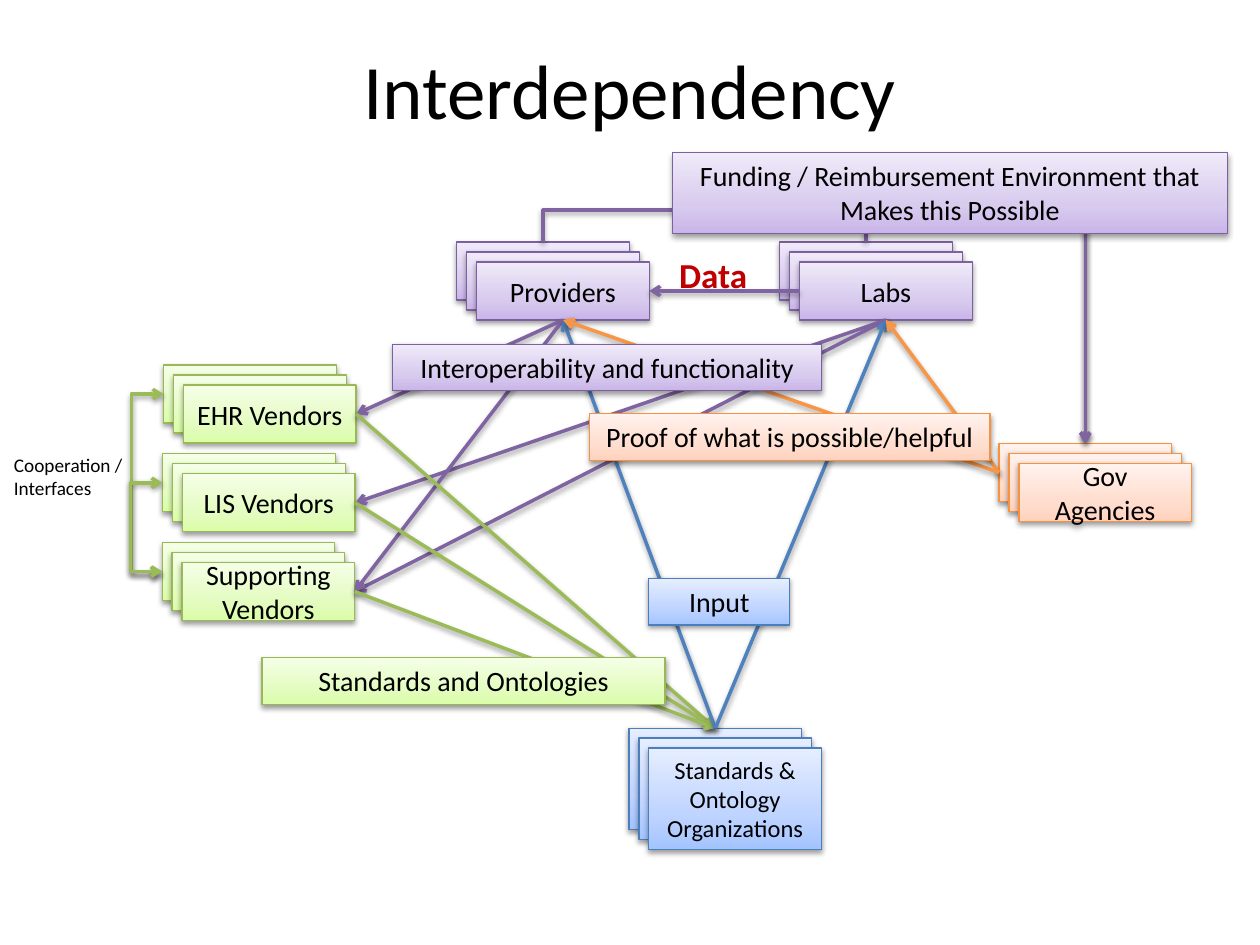
from copy import deepcopy
from dataclasses import dataclass

from lxml.etree import SubElement
from pptx import Presentation
from pptx.dml.color import RGBColor
from pptx.enum.shapes import MSO_CONNECTOR as Connector, MSO_SHAPE as Preset
from pptx.enum.text import MSO_ANCHOR as Anchor, MSO_AUTO_SIZE as AutoSize, PP_ALIGN as Align
from pptx.oxml.ns import qn
from pptx.util import Cm, Pt

BLACK = RGBColor(0x00, 0x00, 0x00)
DARK_RED = RGBColor(0xC0, 0x00, 0x00)
FONT = "Calibri"
TOP, LEFT, BOTTOM, RIGHT = range(4)
STACK_STEP = 0.2
STOP_POSITIONS = (0, 0.35, 1)


@dataclass(frozen=True)
class Palette:
    stops: tuple[RGBColor, RGBColor, RGBColor]
    outline: RGBColor
    arrow: RGBColor


PURPLE = Palette((RGBColor(0xC9, 0xB5, 0xE8), RGBColor(0xD8, 0xCB, 0xEE), RGBColor(0xF0, 0xEA, 0xF9)),
                 RGBColor(0x7D, 0x60, 0xA0), RGBColor(0x80, 0x64, 0xA2))
GREEN = Palette((RGBColor(0xDA, 0xFD, 0xA7), RGBColor(0xE4, 0xFC, 0xC2), RGBColor(0xF5, 0xFF, 0xE7)),
                RGBColor(0x98, 0xB9, 0x55), RGBColor(0x9B, 0xBB, 0x59))
BLUE = Palette((RGBColor(0xA4, 0xC4, 0xFF), RGBColor(0xBF, 0xD4, 0xFF), RGBColor(0xE6, 0xEE, 0xFF)),
               RGBColor(0x4B, 0x7E, 0xBC), RGBColor(0x4F, 0x81, 0xBD))
ORANGE = Palette((RGBColor(0xFF, 0xD2, 0xBD), RGBColor(0xFF, 0xDE, 0xD0), RGBColor(0xFF, 0xF2, 0xED)),
                 RGBColor(0xF6, 0x92, 0x40), RGBColor(0xF7, 0x96, 0x46))


@dataclass(frozen=True)
class Box:
    text: str
    left: float
    top: float
    palette: Palette
    width: float = 3.48
    height: float = 1.17
    size: float = 16


@dataclass(frozen=True)
class Stack:
    back: object
    front: object


LABS = Box("Labs", 15.72, 4.88, PURPLE)
PROVIDERS = Box("Providers", 9.21, 4.88, PURPLE)
EHR = Box("EHR Vendors", 3.3, 7.36, GREEN)
LIS = Box("LIS Vendors", 3.28, 9.15, GREEN)
SUPPORTING = Box("Supporting Vendors", 3.27, 10.94, GREEN)
ORGANIZATIONS = Box("Standards & Ontology Organizations", 12.68, 14.68, BLUE, height=2.04, size=14)
AGENCIES = Box("Gov Agencies", 20.14, 8.94, ORANGE)
GROUPS = (LABS, PROVIDERS, EHR, LIS, SUPPORTING, ORGANIZATIONS, AGENCIES)

ONTOLOGIES = Box("Standards and Ontologies", 5.28, 13.26, GREEN, 8.13, 0.94)
INPUT = Box("Input", 13.08, 11.66, BLUE, 2.84, 0.94)
INTEROPERABILITY = Box("Interoperability and functionality", 7.92, 6.94, PURPLE, 8.64, 0.94)
PROOF = Box("Proof of what is possible/helpful", 11.88, 8.34, ORANGE, 8.08, 0.94)
FUNDING = Box("Funding / Reimbursement Environment that Makes this Possible", 13.56, 3.08, PURPLE, 11.18, 1.63)


def write_text(frame, text: str, *, size: float, color: RGBColor = BLACK, bold: bool = False,
               align: Align = Align.LEFT, anchor: Anchor = Anchor.TOP, grow: bool = False) -> None:
    frame.word_wrap = True
    frame.vertical_anchor = anchor
    frame.auto_size = AutoSize.SHAPE_TO_FIT_TEXT if grow else AutoSize.NONE
    frame.text = text
    for paragraph in frame.paragraphs:
        paragraph.alignment = align
        font = paragraph.runs[0].font
        font.name, font.size, font.bold = FONT, Pt(size), bold
        font.color.rgb = color


def add_shadow(properties) -> None:
    effects = properties.find(qn("a:effectLst"))
    if effects is None:
        effects = SubElement(properties, qn("a:effectLst"))
    shadow = SubElement(effects, qn("a:outerShdw"), blurRad="40000", dist="20000",
                        dir="5400000", rotWithShape="0")
    color = SubElement(shadow, qn("a:srgbClr"), val=str(BLACK))
    SubElement(color, qn("a:alpha"), val="38000")


def add_panel(slide, box: Box, offset: float = 0):
    shape = slide.shapes.add_shape(Preset.RECTANGLE, Cm(box.left + offset), Cm(box.top + offset),
                                   Cm(box.width), Cm(box.height))
    properties = shape._element.spPr
    shape.fill.gradient()
    shape.fill.gradient_angle = 90
    stop_list = properties.find(".//" + qn("a:gsLst"))
    stop_list.append(deepcopy(stop_list[0]))
    for stop, position, color in zip(shape.fill.gradient_stops, STOP_POSITIONS, box.palette.stops):
        stop.position = position
        stop.color.rgb = color
    shape.line.color.rgb = box.palette.outline
    shape.line.width = Pt(0.75)
    shape.shadow.inherit = False
    add_shadow(properties)
    return shape


def add_stack(slide, box: Box) -> Stack:
    back, _, front = [add_panel(slide, box, STACK_STEP * layer) for layer in range(3)]
    write_text(front.text_frame, box.text, size=box.size, align=Align.CENTER, anchor=Anchor.MIDDLE)
    return Stack(back, front)


def add_label(slide, box: Box) -> None:
    shape = add_panel(slide, box)
    write_text(shape.text_frame, box.text, size=box.size, align=Align.CENTER, grow=True)


def add_note(slide, text: str, left: float, top: float, width: float, height: float, **text_format) -> None:
    note = slide.shapes.add_textbox(Cm(left), Cm(top), Cm(width), Cm(height))
    write_text(note.text_frame, text, grow=True, **text_format)


def add_arrow(slide, start, start_side: int, end, end_side: int, palette: Palette,
              kind: Connector = Connector.STRAIGHT, both_ends: bool = False):
    arrow = slide.shapes.add_connector(kind, 0, 0, 0, 0)
    arrow.begin_connect(start, start_side)
    arrow.end_connect(end, end_side)
    arrow.line.color.rgb = palette.arrow
    arrow.line.width = Pt(2)
    line = arrow._element.spPr.find(qn("a:ln"))
    if both_ends:
        SubElement(line, qn("a:headEnd"), type="arrow")
    SubElement(line, qn("a:tailEnd"), type="arrow")
    add_shadow(arrow._element.spPr)
    return arrow


def add_elbow(slide, start, end, side: int, detour: float, palette: Palette, both_ends: bool = False) -> None:
    elbow = add_arrow(slide, start, side, end, side, palette, Connector.ELBOW, both_ends)
    properties = elbow._element.spPr
    if side == TOP:
        center_x, center_y = elbow.left + elbow.width // 2, elbow.top + elbow.height // 2
        elbow.width, elbow.height = elbow.height, elbow.width
        elbow.left, elbow.top = center_x - elbow.width // 2, center_y - elbow.height // 2
        transform = properties.find(qn("a:xfrm"))
        transform.set("rot", "16200000")
        transform.set("flipH", "1")
        detour = -detour
    ratio = round(Cm(detour) / elbow.width * 100000)
    guides = properties.find(qn("a:prstGeom")).find(qn("a:avLst"))
    SubElement(guides, qn("a:gd"), name="adj1", fmla=f"val {ratio}")


def main() -> None:
    presentation = Presentation()
    presentation.slide_width, presentation.slide_height = Cm(25.4), Cm(19.05)
    slide = presentation.slides.add_slide(presentation.slide_layouts[5])
    title = slide.shapes.title
    title.left, title.top, title.width, title.height = Cm(1.27), Cm(0.2), Cm(22.86), Cm(3.18)
    write_text(title.text_frame, "Interdependency", size=44, align=Align.CENTER, anchor=Anchor.MIDDLE)

    labs, providers, ehr, lis, supporting, organizations, agencies = [add_stack(slide, box) for box in GROUPS]

    add_note(slide, "Data", 13.44, 4.98, 1.98, 1.12, size=20, color=DARK_RED, bold=True)
    add_arrow(slide, labs.front, LEFT, providers.front, RIGHT, PURPLE)
    for source, vendor in ((labs, lis), (labs, supporting), (providers, ehr), (providers, supporting)):
        add_arrow(slide, source.front, BOTTOM, vendor.front, RIGHT, PURPLE)

    for vendor in (ehr, lis):
        add_elbow(slide, vendor.back, supporting.back, LEFT, 0.65, GREEN, both_ends=True)
    add_note(slide, "Cooperation /\nInterfaces", 0.03, 9.02, 3.25, 1.19, size=11)

    for vendor in (ehr, lis, supporting):
        add_arrow(slide, vendor.front, RIGHT, organizations.back, TOP, GREEN)
    add_label(slide, ONTOLOGIES)

    for target in (providers, labs):
        add_arrow(slide, organizations.back, TOP, target.front, BOTTOM, BLUE)
    add_label(slide, INPUT)

    for target in (labs, providers):
        add_arrow(slide, agencies.back, LEFT, target.front, BOTTOM, ORANGE)
    add_label(slide, INTEROPERABILITY)
    add_label(slide, PROOF)

    for source in (providers, labs):
        add_elbow(slide, source.back, agencies.back, TOP, 0.64, PURPLE)
    add_label(slide, FUNDING)

    presentation.save("out.pptx")


if __name__ == "__main__":
    main()
